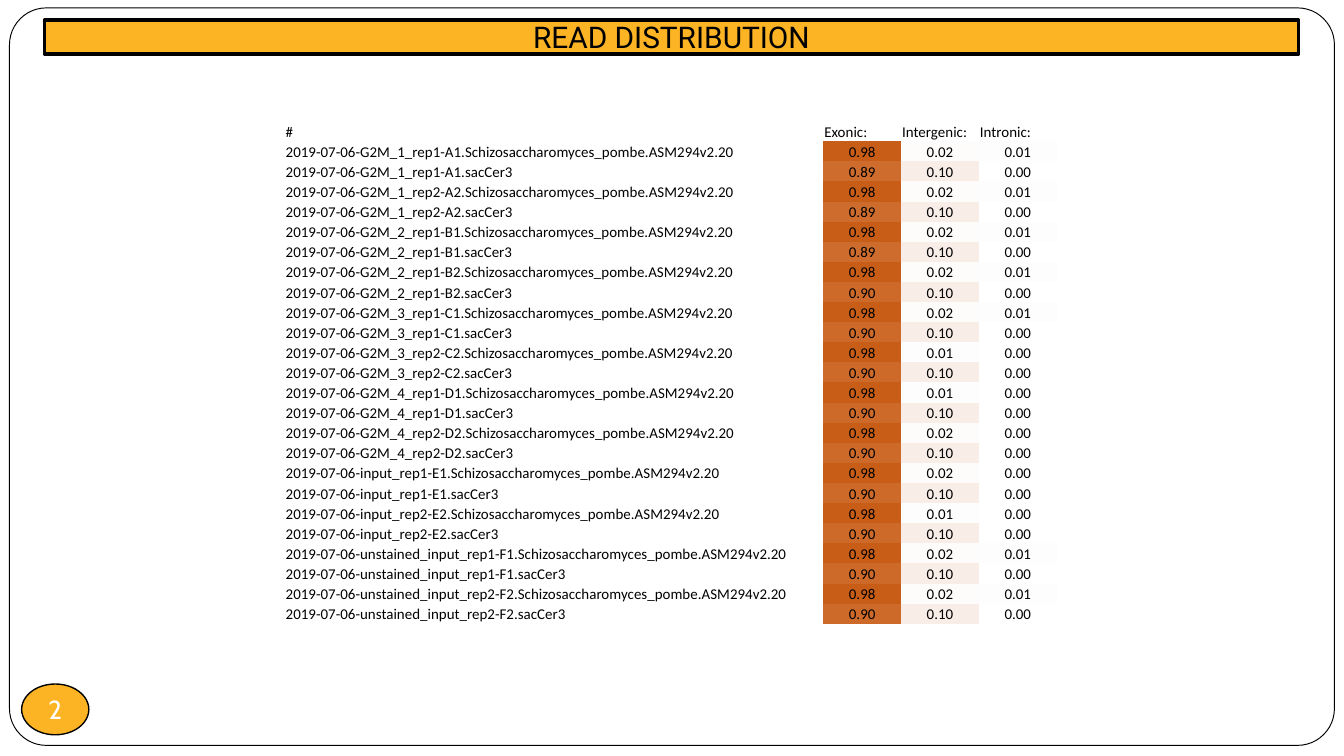
from dataclasses import dataclass
from typing import Optional

from lxml.etree import SubElement as Sub
from pptx import Presentation
from pptx.dml.color import RGBColor as Rgb
from pptx.enum.shapes import MSO_SHAPE as Kind
from pptx.enum.text import MSO_ANCHOR as Anchor, PP_ALIGN as Align
from pptx.oxml.ns import qn
from pptx.util import Cm, Pt

HUES = {"white": "FFFFFF", "black": "000000", "gold": "FCB424", "rust": "C75A12"}
HEADS = ("#", "Exonic:", "Intergenic:", "Intronic:")
WIDTHS = (10.18, 1.47, 1.47, 1.47)
ROW = 0.38
PLAIN = "{2D5ABB26-0587-4C30-8999-92F81FD0307C}"  # table style without grid
DATE = "2019-07-06"
POMBE = "Schizosaccharomyces_pombe.ASM294v2.20"
YEAST = "sacCer3"


@dataclass
class Box:
    left: float
    top: float
    width: float
    height: float

    def lengths(self) -> tuple:
        return Cm(self.left), Cm(self.top), Cm(self.width), Cm(self.height)


@dataclass
class Sample:
    name: str
    pombe: tuple  # exonic, intergenic, intronic shares
    yeast: tuple = (0.90, 0.10, 0.00)


LOW = (0.89, 0.10, 0.00)
SAMPLES = (
    Sample("G2M_1_rep1-A1", (0.98, 0.02, 0.01), LOW),
    Sample("G2M_1_rep2-A2", (0.98, 0.02, 0.01), LOW),
    Sample("G2M_2_rep1-B1", (0.98, 0.02, 0.01), LOW),
    Sample("G2M_2_rep1-B2", (0.98, 0.02, 0.01)),
    Sample("G2M_3_rep1-C1", (0.98, 0.02, 0.01)),
    Sample("G2M_3_rep2-C2", (0.98, 0.01, 0.00)),
    Sample("G2M_4_rep1-D1", (0.98, 0.01, 0.00)),
    Sample("G2M_4_rep2-D2", (0.98, 0.02, 0.00)),
    Sample("input_rep1-E1", (0.98, 0.02, 0.00)),
    Sample("input_rep2-E2", (0.98, 0.01, 0.00)),
    Sample("unstained_input_rep1-F1", (0.98, 0.02, 0.01)),
    Sample("unstained_input_rep2-F2", (0.98, 0.02, 0.01)),
)


def color(name: str) -> Rgb:
    return Rgb.from_string(HUES[name])


def shade(share: float) -> Rgb:
    """Blend from white (0) to rust (1)."""
    return Rgb(*(round(255 - share * (255 - part)) for part in color("rust")))


def paint(shape, fill: str, weight: float) -> None:
    shape.fill.solid()
    shape.fill.fore_color.rgb = color(fill)
    shape.line.color.rgb = color("black")
    shape.line.width = Pt(weight)


def write(frame, text: str, font: str, size: float, hue: str,
          align: Optional[Align] = None) -> None:
    para = frame.paragraphs[0]
    para.alignment = align
    run = para.add_run()
    run.text = text
    run.font.name = font
    run.font.size = Pt(size)
    run.font.color.rgb = color(hue)


def add_shape(slide, kind: Kind, box: Box, fill: str, weight: float):
    shape = slide.shapes.add_shape(kind, *box.lengths())
    shape.shadow.inherit = False
    paint(shape, fill, weight)
    return shape


def add_badge(slide, text: str) -> None:
    badge = add_shape(slide, Kind.OVAL, Box(0.41, 12.93, 1.27, 0.96), "gold", 0.75)
    frame = badge.text_frame
    frame.margin_left = frame.margin_right = 0
    frame.margin_top = frame.margin_bottom = 0
    frame.word_wrap = False
    frame.vertical_anchor = Anchor.MIDDLE
    write(frame, text, "Cabin", 14, "white", Align.CENTER)


def set_title(slide, text: str) -> None:
    title = slide.shapes.title
    slide.shapes._spTree.append(title._element)  # above the frame
    title.left, title.top, title.width, title.height = Box(0.84, 0.38, 23.7, 0.64).lengths()
    # Rounded outline, then fill and line
    geom = Sub(title._element.spPr, qn("a:prstGeom"), prst="roundRect")
    Sub(geom, qn("a:avLst"))
    paint(title, "gold", 2)
    title.text_frame.vertical_anchor = Anchor.MIDDLE
    write(title.text_frame, text, "Roboto", 16, "black", Align.CENTER)


def fill_cell(cell, value) -> None:
    cell.margin_left = cell.margin_right = cell.margin_top = Cm(0.02)
    cell.margin_bottom = 0
    cell.vertical_anchor = Anchor.BOTTOM
    if isinstance(value, str):
        cell.fill.background()
        write(cell.text_frame, value, "Calibri", 8, "black")
    else:
        cell.fill.solid()
        cell.fill.fore_color.rgb = shade(value)
        write(cell.text_frame, f"{value:.2f}", "Calibri", 8, "black", Align.CENTER)


def add_grid(slide) -> None:
    rows = [HEADS]
    for item in SAMPLES:
        for genome, shares in ((POMBE, item.pombe), (YEAST, item.yeast)):
            rows.append((f"{DATE}-{item.name}.{genome}", *shares))
    box = Box(5.38, 2.29, sum(WIDTHS), ROW * len(rows))
    grid = slide.shapes.add_table(len(rows), len(HEADS), *box.lengths()).table
    grid.first_row = grid.horz_banding = False
    grid._tbl.tblPr.find(qn("a:tableStyleId")).text = PLAIN
    for col, width in zip(grid.columns, WIDTHS):
        col.width = Cm(width)
    for line, values in zip(grid.rows, rows):
        line.height = Cm(ROW)
        for cell, value in zip(line.cells, values):
            fill_cell(cell, value)


def main() -> None:
    deck = Presentation()
    deck.slide_width, deck.slide_height = Cm(25.4), Cm(14.29)
    slide = deck.slides.add_slide(deck.slide_layouts[5])
    # Page frame
    page = add_shape(slide, Kind.ROUNDED_RECTANGLE, Box(0.18, 0.15, 25.04, 13.94), "white", 0.5)
    page.adjustments[0] = 0.05
    # Page number, title and table
    add_badge(slide, "2")
    set_title(slide, "READ DISTRIBUTION")
    add_grid(slide)
    deck.save("out.pptx")


if __name__ == "__main__":
    main()
